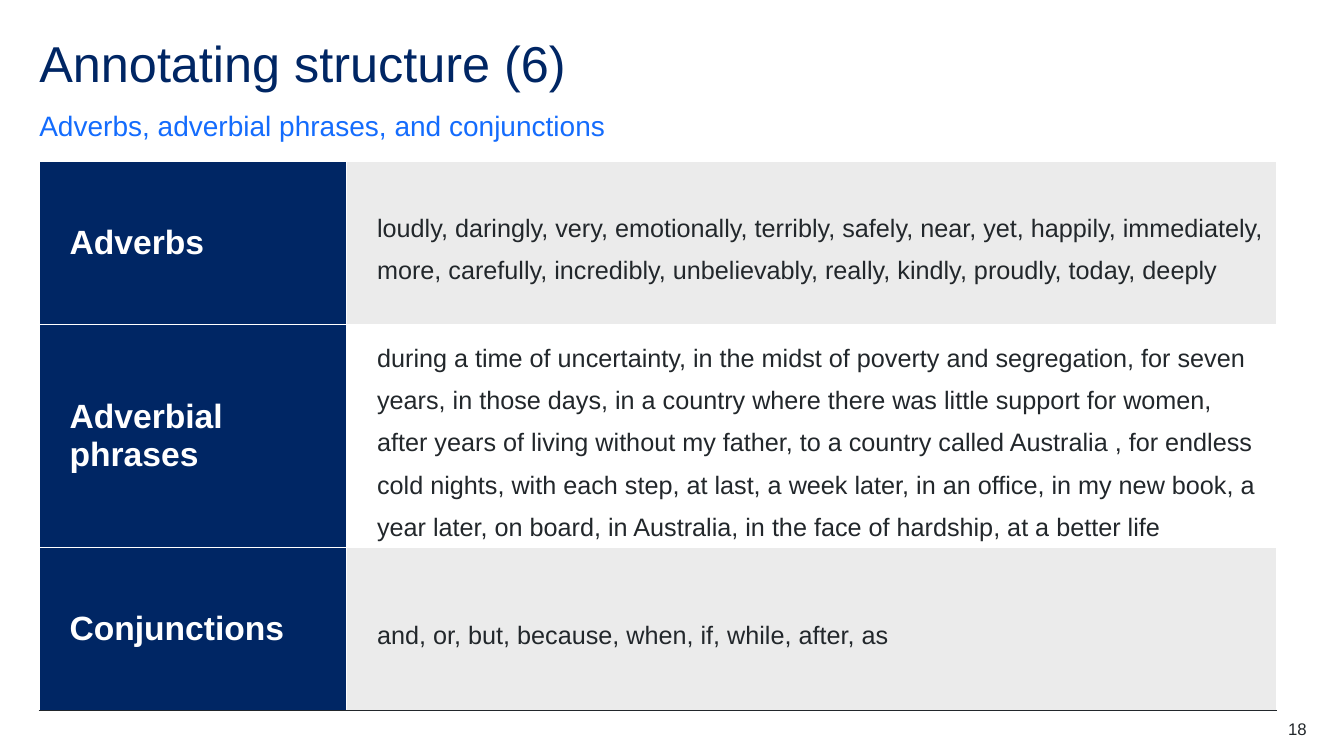
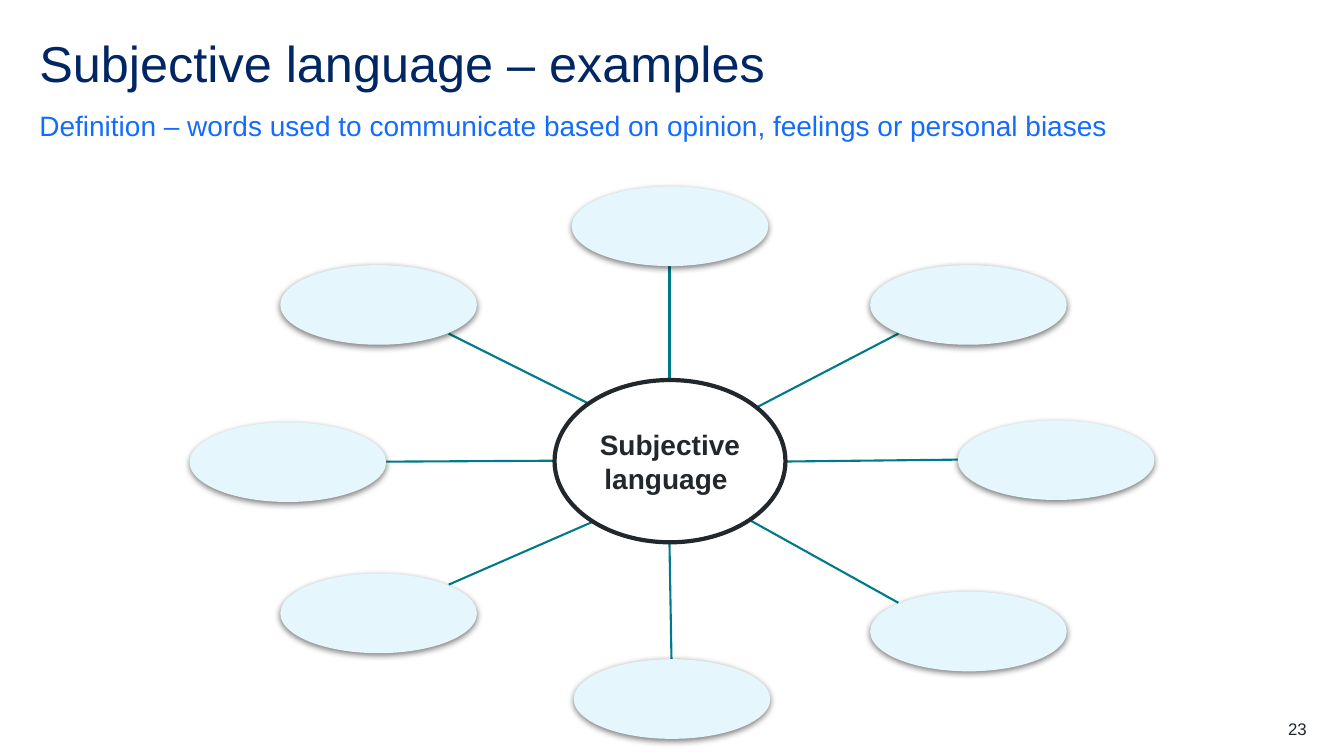
from lxml import etree
from pptx import Presentation
from pptx import util as u
from pptx.dml.color import RGBColor
from pptx.enum import shapes, text
from pptx.oxml.ns import qn

HUE = {"navy": "002664", "blue": "146CFD", "ink": "22272B", "white": "FFFFFF",
       "grey": "EBEBEB", "teal": "007A8A", "pale": "E5F7FC"}
PX = u.Inches(1) // 100


def put(par, words, size, hue, bold=False):
    run = par.add_run()
    run.text = words
    run.font.name = "Arial"
    run.font.size = u.Pt(size)
    run.font.bold = bold
    run.font.color.rgb = RGBColor.from_string(HUE[hue])


def start(deck, title, note, page):
    slide = deck.slides.add_slide(deck.slide_layouts[5])
    head = slide.shapes.title
    head.left, head.top, head.width, head.height = [n * PX for n in (39, 39, 1256, 60)]
    sub = slide.shapes.add_textbox(39 * PX, 107 * PX, 1256 * PX, 34 * PX)
    foot = slide.shapes.add_textbox(1217 * PX, 713 * PX, 79 * PX, 20 * PX)
    left, right = text.PP_ALIGN.LEFT, text.PP_ALIGN.RIGHT
    top, low = text.MSO_ANCHOR.TOP, text.MSO_ANCHOR.BOTTOM
    for box, words, size, hue, side, hold, gap in (
            (head, title, 36, "navy", left, top, 0.9),
            (sub, note, 20, "blue", left, low, 1.5),
            (foot, page, 12, "ink", right, top, 1.0)):
        frame = box.text_frame
        frame.word_wrap = True
        frame.auto_size = text.MSO_AUTO_SIZE.NONE
        frame.vertical_anchor = hold
        frame.margin_left = frame.margin_right = 0
        frame.margin_top = frame.margin_bottom = 0
        par = frame.paragraphs[0]
        par.alignment = side
        par.line_spacing = gap
        put(par, words, size, hue)
    return slide


deck = Presentation()
deck.slide_width, deck.slide_height = 1333 * PX, 750 * PX

slide = start(deck, "Annotating structure (6)",
              "Adverbs, adverbial phrases, and conjunctions", "18")
rows = [
    ("Adverbs", 162, "grey", "white",
     "loudly, daringly, very, emotionally, terribly, safely, near, yet, happily, "
     "immediately, more, carefully, incredibly, unbelievably, really, kindly, "
     "proudly, today, deeply"),
    ("Adverbial phrases", 221, "white", "white",
     "during a time of uncertainty, in the midst of poverty and segregation, for "
     "seven years, in those days, in a country where there was little support for "
     "women, after years of living without my father, to a country called Australia "
     ", for endless cold nights, with each step, at last, a week later, in an "
     "office, in my new book, a year later, on board, in Australia, in the face of "
     "hardship, at a better life"),
    ("Conjunctions", 162, "grey", "ink",
     "and, or, but, because, when, if, while, after, as"),
]
table = slide.shapes.add_table(3, 2, 39 * PX, 160 * PX, 1227 * PX, 545 * PX).table
table.first_row = table.horz_banding = False
table.columns[0].width, table.columns[1].width = 305 * PX, 922 * PX
for row, (name, tall, fill, edge, words) in enumerate(rows):
    table.rows[row].height = tall * PX
    for col, back in enumerate(("navy", fill)):
        cell = table.cell(row, col)
        cell.fill.solid()
        cell.fill.fore_color.rgb = RGBColor.from_string(HUE[back])
        cell.vertical_anchor = text.MSO_ANCHOR.MIDDLE
        cell.margin_left = 30 * PX
        par = cell.text_frame.paragraphs[0]
        if col:
            par.line_spacing = 1.5
            par.space_after = u.Pt(12)
            put(par, words, 18, "ink")
        else:
            put(par, name, 24, "white", True)
        rule = etree.Element(qn("a:lnB"), w=str(u.Pt(1)))
        ink = etree.SubElement(rule, qn("a:solidFill"))
        etree.SubElement(ink, qn("a:srgbClr"), val=HUE[edge])
        cell._tc.get_or_add_tcPr().insert(0, rule)

slide = start(deck, "Subjective language – examples",
              "Definition – words used to communicate based on opinion, "
              "feelings or personal biases", "23")
wide, tall = 195, 79
spokes = [
    (278, 263, 1, 1, 583, 400),
    (567, 185, 0, 1, 664, 377),
    (863, 263, -1, 1, 745, 407),
    (950, 417, -1, 0, 767, 458),
    (863, 587, -1, -1, 740, 514),
    (569, 654, 0, -1, 664, 538),
    (278, 569, 1, -1, 594, 515),
    (188, 419, 1, 0, 566, 457),
]
for left, top, across, down, hubx, huby in spokes:
    reach = 0.71 if across and down else 1
    endx = round(left + wide / 2 * (1 + across * reach))
    endy = round(top + tall / 2 * (1 + down * reach))
    line = slide.shapes.add_connector(shapes.MSO_CONNECTOR.STRAIGHT, hubx * PX,
                                      huby * PX, endx * PX, endy * PX)
    line.line.color.rgb = RGBColor.from_string(HUE["teal"])
    line.line.width = u.Pt(1.5)
    etree.SubElement(line._element.spPr, qn("a:effectLst"))

    oval = slide.shapes.add_shape(shapes.MSO_SHAPE.OVAL, left * PX, top * PX,
                                  wide * PX, tall * PX)
    oval.fill.solid()
    oval.fill.fore_color.rgb = RGBColor.from_string(HUE["pale"])
    oval.line.fill.background()
    oval.shadow.inherit = False
    glow = etree.SubElement(oval._element.spPr.find(qn("a:effectLst")),
                            qn("a:outerShdw"), blurRad=str(u.Pt(4.5)),
                            dist=str(u.Pt(1.5)), dir="5400000", rotWithShape="0")
    dark = etree.SubElement(glow, qn("a:srgbClr"), val="000000")
    etree.SubElement(dark, qn("a:alpha"), val="50000")

hub = slide.shapes.add_shape(shapes.MSO_SHAPE.OVAL, 550 * PX, 377 * PX,
                             229 * PX, 161 * PX)
hub.shadow.inherit = False
hub.fill.solid()
hub.fill.fore_color.rgb = RGBColor.from_string(HUE["white"])
hub.line.color.rgb = RGBColor.from_string(HUE["ink"])
hub.line.width = u.Pt(3)
hub.text_frame.word_wrap = True
hub.text_frame.vertical_anchor = text.MSO_ANCHOR.MIDDLE
par = hub.text_frame.paragraphs[0]
par.alignment = text.PP_ALIGN.CENTER
put(par, "Subjective", 20, "ink", True)
par.add_line_break()
put(par, "language ", 20, "ink", True)

deck.save("out.pptx")
